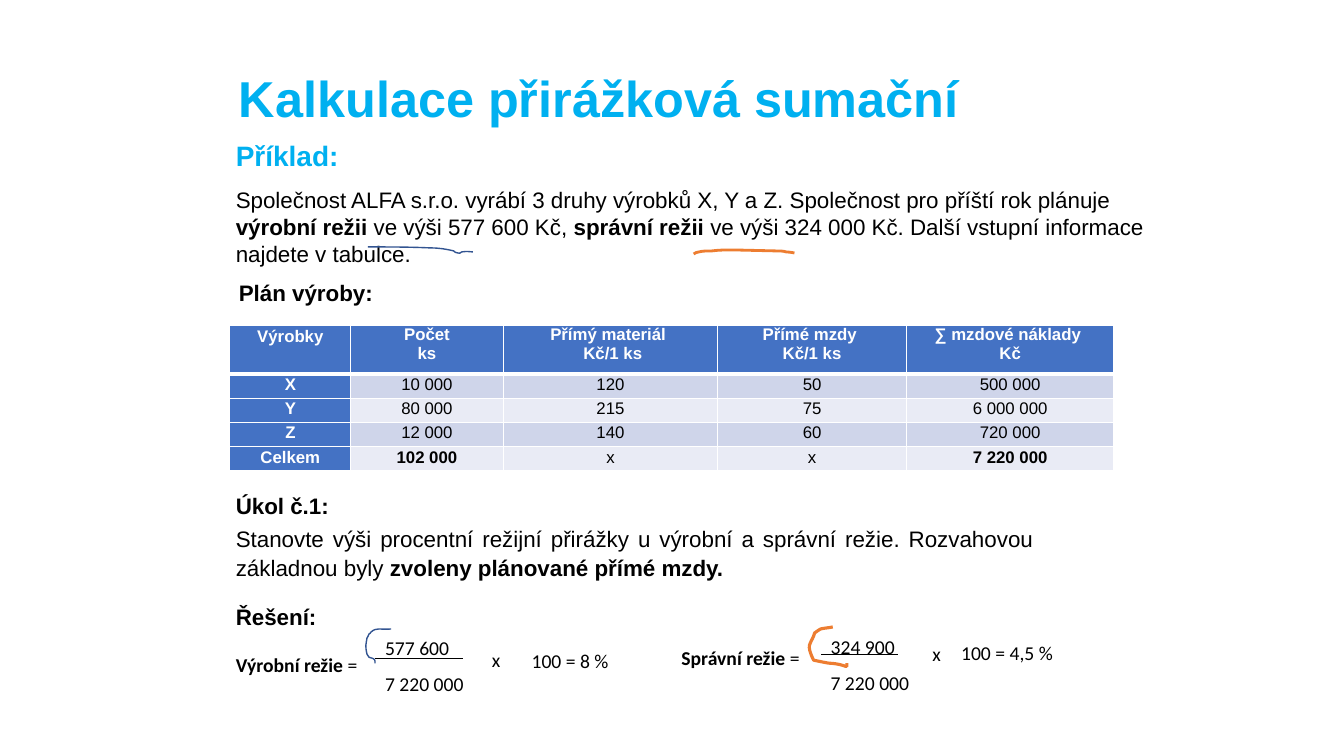
import pptx
import pptx.dml.color
import pptx.enum.shapes
import pptx.enum.text
import pptx.oxml
import pptx.oxml.ns
import pptx.util
from pptx.util import Inches

ALIGN = pptx.enum.text.PP_ALIGN
ANCHOR = pptx.enum.text.MSO_ANCHOR
SKY, BLACK, WHITE, HEADER = "00B0F0", "000000", "FFFFFF", "4472C4"
BANDS = ["CFD5EA", "E9EBF5"]
PEN_BLUE, PEN_ORANGE = "325491", "ED7D31"
LOOSE = {"line_spacing": 1.07, "space_after": pptx.util.Pt(8)}
JUSTIFIED = {"alignment": ALIGN.JUSTIFY, **LOOSE}
CENTRED = {"alignment": ALIGN.CENTER}

PLAN = [
    ["Výrobky", "Počet\nks", "Přímý materiál \n Kč/1 ks", "Přímé mzdy \nKč/1 ks",
     "∑ mzdové náklady \nKč"],
    ["X", "10 000", "120", "50", "500 000"],
    ["Y", "80 000", "215", "75", "6 000 000"],
    ["Z", "12 000", "140", "60", "720 000"],
    ["Celkem", "|102 000", "x", "x", "|7 220 000"],
]
COLUMN_WIDTHS = [1.2, 1.51, 2.13, 1.87, 2.06]
ROW_HEIGHTS = [0.48] + [0.24] * 4

# Pen strokes: a start point, then curves (6 numbers) or straight lines (2 numbers)
PRODUCTION_UNDERLINE = [
    (3.65, 2.45), (3.85, 2.45, 4.06, 2.45, 4.27, 2.46),
    (4.35, 2.46, 4.42, 2.47, 4.5, 2.49), (4.51, 2.5, 4.52, 2.51, 4.54, 2.51),
    (4.55, 2.52, 4.57, 2.51, 4.58, 2.5), (4.65, 2.49, 4.65, 2.5, 4.69, 2.5)]
ADMIN_UNDERLINE = [
    (6.88, 2.52), (6.9, 2.51, 6.91, 2.5, 6.93, 2.5),
    (6.97, 2.49, 7.01, 2.49, 7.06, 2.49), (7.13, 2.48, 7.2, 2.48, 7.28, 2.48),
    (7.7, 2.49), (7.73, 2.49, 7.77, 2.49, 7.8, 2.5),
    (7.83, 2.5, 7.88, 2.51, 7.88, 2.51)]
PRODUCTION_BRACKET = [
    (3.88, 6.24), (3.76, 6.25, 3.74, 6.22, 3.68, 6.27),
    (3.67, 6.28, 3.67, 6.29, 3.66, 6.29), (3.65, 6.31, 3.65, 6.32, 3.64, 6.33),
    (3.63, 6.4, 3.62, 6.4, 3.64, 6.49), (3.65, 6.5, 3.65, 6.51, 3.66, 6.52),
    (3.68, 6.53, 3.72, 6.53, 3.72, 6.56), (3.72, 6.58)]
ADMIN_BRACKET = [
    (8.26, 6.22), (8.22, 6.23, 8.18, 6.23, 8.14, 6.24),
    (8.12, 6.25, 8.08, 6.28, 8.08, 6.28), (8.08, 6.29, 8.08, 6.3, 8.07, 6.31),
    (8.04, 6.39, 7.99, 6.39, 8.07, 6.55), (8.07, 6.55, 8.21, 6.58, 8.23, 6.58),
    (8.41, 6.59, 8.4, 6.65, 8.4, 6.58)]


def rgb(colour):
    return pptx.dml.color.RGBColor.from_string(colour)


def apply(target, values):
    for name, value in values.items():
        setattr(target, name, value)


def write(paragraph, text, size, colour=BLACK, font="Arial", bold=False, layout=LOOSE):
    """Fill a paragraph; each | in the text switches bold on or off."""
    apply(paragraph, layout)
    for index, part in enumerate(text.split("|")):
        if part:
            run = paragraph.add_run()
            run.text = part
            apply(run.font, {"size": pptx.util.Pt(size), "name": font,
                             "bold": bold != (index % 2 == 1)})
            run.font.color.rgb = rgb(colour)


def add_text(slide, box, paragraphs):
    frame = slide.shapes.add_textbox(*map(Inches, box)).text_frame
    apply(frame, {"word_wrap": True,
                  "auto_size": pptx.enum.text.MSO_AUTO_SIZE.SHAPE_TO_FIT_TEXT})
    for index, values in enumerate(paragraphs):
        write(frame.add_paragraph() if index else frame.paragraphs[0], **values)


def add_heading(slide, box, text):
    add_text(slide, box, [{"text": text, "size": 16, "bold": True, "layout": JUSTIFIED}])


def set_borders(cell, widths):
    properties = cell._tc.get_or_add_tcPr()
    for side, width in zip("LRTB", widths):
        properties.append(pptx.oxml.parse_xml(
            f'<a:ln{side} {pptx.oxml.ns.nsdecls("a")} w="{pptx.util.Pt(width)}">'
            f'<a:solidFill><a:srgbClr val="{WHITE}"/></a:solidFill></a:ln{side}>'))


def add_plan_table(slide):
    table = slide.shapes.add_table(
        len(PLAN), len(COLUMN_WIDTHS), Inches(2.28), Inches(3.23),
        Inches(sum(COLUMN_WIDTHS)), Inches(sum(ROW_HEIGHTS))).table
    for column, width in zip(table.columns, COLUMN_WIDTHS):
        column.width = Inches(width)
    for r, (row, height) in enumerate(zip(PLAN, ROW_HEIGHTS)):
        table.rows[r].height = Inches(height)
        for c, text in enumerate(row):
            cell = table.cell(r, c)
            is_head = r == 0 or c == 0
            apply(cell, {"margin_left": Inches(0.07), "margin_right": Inches(0.07),
                         "margin_top": 0, "margin_bottom": 0})
            set_borders(cell, [1, 1, 3 if r == 1 else 1, 3 if r == 0 else 1])
            cell.fill.solid()
            cell.fill.fore_color.rgb = rgb(HEADER if is_head else BANDS[(r - 1) % 2])
            layout = CENTRED if "\n" in text else {**CENTRED, **LOOSE}
            for index, line in enumerate(text.split("\n")):
                paragraph = (cell.text_frame.add_paragraph() if index
                             else cell.text_frame.paragraphs[0])
                write(paragraph, line, 12, WHITE if is_head else BLACK,
                      bold=is_head, layout=layout)


def add_term(group, box, lines):
    term = group.shapes.add_shape(pptx.enum.shapes.MSO_SHAPE.RECTANGLE, *map(Inches, box))
    term.shadow.inherit = False
    term.fill.solid()
    term.fill.fore_color.rgb = rgb(WHITE)
    term.line.color.rgb = rgb(WHITE)
    term.line.width = pptx.util.Pt(0.75)
    frame = term.text_frame
    apply(frame, {"word_wrap": True, "vertical_anchor": ANCHOR.TOP})
    for index, line in enumerate(lines):
        write(frame.add_paragraph() if index else frame.paragraphs[0], line, 14,
              font="Calibri", layout={"alignment": ALIGN.LEFT, **LOOSE})
    return term


def add_fraction_bar(group, left, right, y):
    bar = group.shapes.add_connector(pptx.enum.shapes.MSO_CONNECTOR.STRAIGHT,
                                     Inches(left), Inches(y), Inches(right), Inches(y))
    bar.line.color.rgb = rgb(BLACK)
    bar.line.width = pptx.util.Pt(0.75)
    bar._element.spPr.append(
        pptx.oxml.parse_xml(f'<a:effectLst {pptx.oxml.ns.nsdecls("a")}/>'))
    return bar


def add_production_equation(slide):
    group = slide.shapes.add_group_shape()
    fraction = add_term(group, (3.72, 6.24, 1.41, 0.58), ["577 600", "7 220 000"])
    add_term(group, (5.13, 6.37, 1.05, 0.38), [" 100 = 8 %"])
    add_term(group, (4.78, 6.36, 0.35, 0.28), ["x"])
    add_term(group, (2.24, 6.41, 1.56, 0.33), ["|Výrobní režie |="])
    add_fraction_bar(group, 3.72, 4.59, 6.53).begin_connect(fraction, 1)


def add_admin_equation(slide):
    # The label comes last, so that it covers the start of the bar
    group = slide.shapes.add_group_shape()
    add_term(group, (8.14, 6.23, 1.53, 0.73), ["324 900", "7 220 000"])
    add_fraction_bar(group, 8.03, 8.91, 6.49)
    add_term(group, (9.15, 6.3, 0.36, 0.34), ["x"])
    add_term(group, (9.39, 6.29, 1.66, 0.5), [" 100 = 4,5 %"])
    add_term(group, (6.66, 6.34, 1.48, 0.33), ["|Správní režie| ="])


def add_pen_stroke(slide, stroke, colour, width):
    start, *segments = stroke
    builder = slide.shapes.build_freeform(*map(Inches, start))
    builder.add_line_segments(
        [tuple(map(Inches, segment[-2:])) for segment in segments], close=False)
    pen = builder.convert_to_shape()
    pen.shadow.inherit = False
    pen.fill.background()
    pen.line.color.rgb = rgb(colour)
    pen.line.width = pptx.util.Pt(width)
    # Bend the segments that have control points
    straights = list(pen._element.iter(pptx.oxml.ns.qn("a:lnTo")))
    for straight, segment in zip(straights, segments):
        if len(segment) == 6:
            points = "".join(
                f'<a:pt x="{Inches(x) - pen.left}" y="{Inches(y) - pen.top}"/>'
                for x, y in zip(segment[::2], segment[1::2]))
            straight.getparent().replace(straight, pptx.oxml.parse_xml(
                f'<a:cubicBezTo {pptx.oxml.ns.nsdecls("a")}>{points}</a:cubicBezTo>'))


def main():
    deck = pptx.Presentation()
    apply(deck, {"slide_width": Inches(13.33), "slide_height": Inches(7.5)})
    slide = deck.slides.add_slide(deck.slide_layouts[5])

    # Title
    title = slide.shapes.title
    apply(title, {"left": Inches(2.27), "top": Inches(0.74),
                  "width": Inches(9), "height": Inches(0.53)})
    apply(title.text_frame, {"vertical_anchor": ANCHOR.MIDDLE, "word_wrap": True,
                             "auto_size": pptx.enum.text.MSO_AUTO_SIZE.NONE})
    write(title.text_frame.paragraphs[0], "Kalkulace přirážková sumační", 36, SKY, bold=True,
          layout={"alignment": ALIGN.LEFT, "line_spacing": 0.9})

    # Example and production plan
    add_text(slide, (2.24, 1.28, 9.23, 1.44), [
        {"text": "Příklad:", "size": 20, "colour": SKY, "bold": True,
         "layout": {"line_spacing": 1.15, "space_after": pptx.util.Pt(10)}},
        {"text": "Společnost ALFA s.r.o. vyrábí 3 druhy výrobků X, Y a Z. Společnost pro "
                 "příští rok plánuje |výrobní režii |ve výši 577 600 Kč, |správní režii "
                 "|ve výši 324 000 Kč. Další vstupní informace najdete v tabulce.",
         "size": 16, "layout": {}}])
    add_heading(slide, (2.27, 2.7, 2.32, 0.37), "Plán výroby:")
    add_plan_table(slide)

    # Task
    add_heading(slide, (2.24, 4.81, 1.46, 0.38), "Úkol č.1:")
    add_text(slide, (2.24, 5.14, 8.11, 0.66), [
        {"text": "Stanovte výši procentní režijní přirážky u výrobní a správní režie. "
                 "Rozvahovou základnou byly |zvoleny plánované přímé mzdy.",
         "size": 16, "layout": JUSTIFIED}])

    # Solution
    add_heading(slide, (2.24, 5.92, 1.46, 0.38), "Řešení:")
    add_production_equation(slide)
    add_admin_equation(slide)

    # Pen marks
    for stroke, colour, width in [
            (PRODUCTION_UNDERLINE, PEN_BLUE, 1), (ADMIN_UNDERLINE, PEN_ORANGE, 2),
            (PRODUCTION_BRACKET, PEN_BLUE, 1), (ADMIN_BRACKET, PEN_ORANGE, 2.25)]:
        add_pen_stroke(slide, stroke, colour, width)

    deck.save("out.pptx")


if __name__ == "__main__":
    main()
